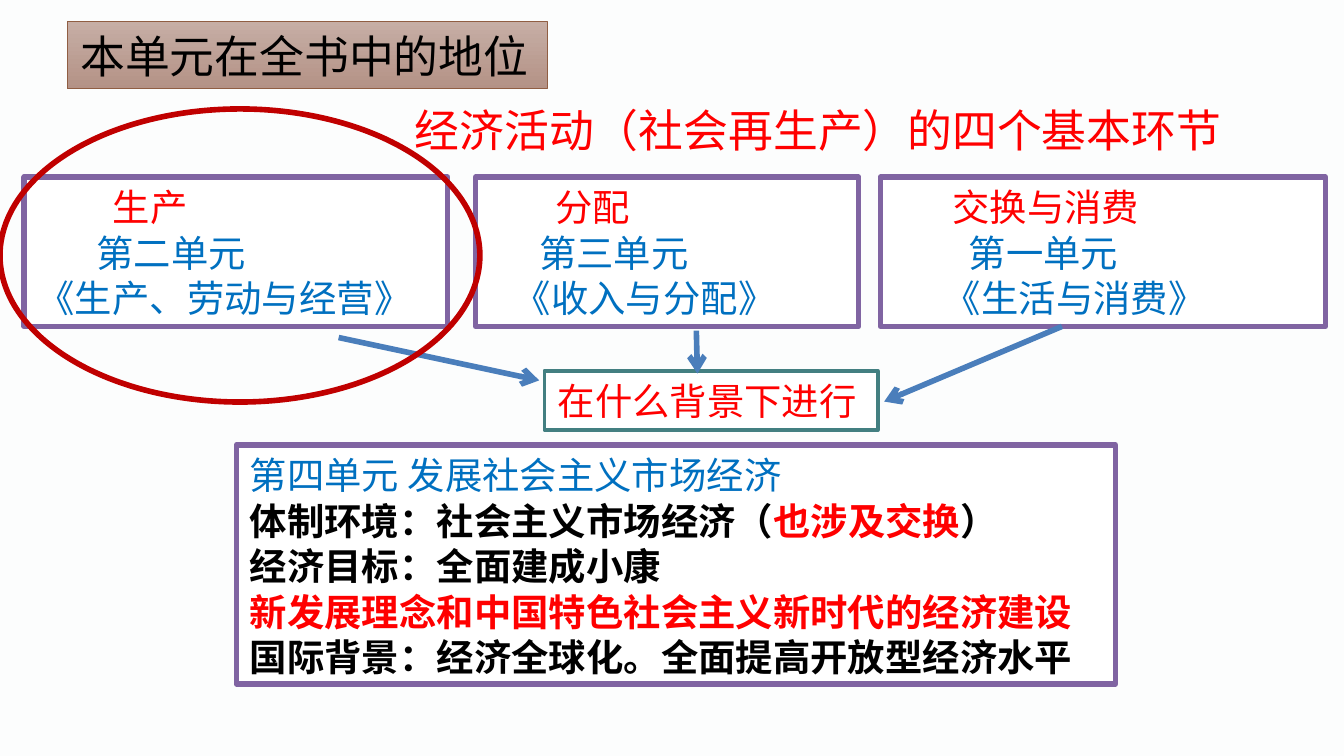
from pptx import Presentation
from pptx import util as u
from pptx.dml.color import RGBColor
from pptx.enum import shapes, text
from pptx.oxml import ns
from lxml import etree

FONT = "Noto Sans CJK SC"
RED = RGBColor(0xFF, 0x00, 0x00)
BLUE = RGBColor(0x00, 0x70, 0xC0)
BLACK = RGBColor(0x00, 0x00, 0x00)
WHITE = RGBColor(0xFF, 0xFF, 0xFF)
PURPLE = RGBColor(0x80, 0x64, 0xA2)
TEAL = RGBColor(0x43, 0x7F, 0x81)
ARROW_BLUE = RGBColor(0x4A, 0x7E, 0xBB)
DARK_RED = RGBColor(0xC0, 0x00, 0x00)
BROWN = RGBColor(0x90, 0x5E, 0x43)
LIGHT_TAN = RGBColor(0xC6, 0xAE, 0xA5)
DARK_TAN = RGBColor(0xB4, 0x92, 0x86)
BACKGROUND = RGBColor(0xFC, 0xFD, 0xFD)
LINE_SPACING = 1.22


def place(left, top, width, height):
    """Return a position and size given in centimetres as lengths."""
    return u.Cm(left), u.Cm(top), u.Cm(width), u.Cm(height)


def add_run(paragraph, words, size, colour, bold):
    """Add one run with Latin and East Asian fonts set."""
    run = paragraph.add_run()
    run.text = words
    run.font.size = u.Pt(size)
    run.font.bold = bold
    run.font.color.rgb = colour
    run.font.name = FONT
    etree.SubElement(run.font._element, ns.qn("a:ea"), typeface=FONT)


def write(shape, lines, size, wrap=True):
    """Write lines, each an indent in centimetres, a bold flag and its coloured runs."""
    frame = shape.text_frame
    frame.word_wrap = wrap
    frame.auto_size = text.MSO_AUTO_SIZE.SHAPE_TO_FIT_TEXT
    frame.vertical_anchor = text.MSO_ANCHOR.TOP
    for index, (indent, bold, runs) in enumerate(lines):
        paragraph = frame.add_paragraph() if index else frame.paragraphs[0]
        paragraph.alignment = text.PP_ALIGN.LEFT
        paragraph.line_spacing = u.Pt(LINE_SPACING * size)
        properties = paragraph._p.get_or_add_pPr()
        properties.set("marL", str(u.Cm(indent)))
        properties.set("indent", "0")
        for words, colour in runs:
            add_run(paragraph, words, size, colour, bold)


def add_outline(slide, kind, box, colour, weight):
    """Add an unfilled preset shape with a coloured outline."""
    shape = slide.shapes.add_shape(kind, *place(*box))
    shape.shadow.inherit = False
    shape.fill.background()
    shape.line.color.rgb = colour
    shape.line.width = u.Pt(weight)
    return shape


def add_box(slide, box, colour, weight, lines):
    """Add a white outlined box holding text."""
    shape = add_outline(slide, shapes.MSO_SHAPE.RECTANGLE, box, colour, weight)
    shape.fill.solid()
    shape.fill.fore_color.rgb = WHITE
    write(shape, lines, 20)


def add_title(slide, box, words):
    """Add the title on a vertical gradient."""
    shape = add_outline(slide, shapes.MSO_SHAPE.RECTANGLE, box, BROWN, 0.5)
    shape.fill.gradient()
    shape.fill.gradient_angle = 270
    for stop, colour in zip(shape.fill.gradient_stops, (LIGHT_TAN, DARK_TAN)):
        stop.color.rgb = colour
    write(shape, [(0, False, [(words, BLACK)])], 24, wrap=False)


def add_heading(slide, box, words):
    """Add the red heading."""
    shape = slide.shapes.add_textbox(*place(*box))
    write(shape, [(0, False, [(words, RED)])], 24)


def add_arrow(slide, ends):
    """Add a straight arrow between two points in centimetres."""
    connector = slide.shapes.add_connector(
        shapes.MSO_CONNECTOR.STRAIGHT, *place(*ends))
    connector.line.color.rgb = ARROW_BLUE
    connector.line.width = u.Pt(3)
    etree.SubElement(connector.line._get_or_add_ln(), ns.qn("a:tailEnd"), type="arrow")
    etree.SubElement(connector._element.spPr, ns.qn("a:effectLst"))


def main():
    """Build and save the slide."""
    presentation = Presentation()
    presentation.slide_width = u.Cm(25.4)
    presentation.slide_height = u.Cm(14.29)
    slide = presentation.slides.add_slide(presentation.slide_layouts[6])
    slide.background.fill.solid()
    slide.background.fill.fore_color.rgb = BACKGROUND

    add_title(slide, (1.27, 0.41, 9.07, 1.27), "本单元在全书中的地位")

    units = [
        (16.64, 8.41, (1.11, 1.42, 0.95), ("交换与消费", "第一单元", "《生活与消费》")),
        (0.46, 8.0, (1.42, 1.11, 0), ("生产", "第二单元", "《生产、劳动与经营》")),
        (8.99, 7.24, (1.26, 0.95, 0.47), ("分配", "第三单元", "《收入与分配》")),
    ]
    for left, width, indents, words in units:
        lines = [(indent, False, [(line, colour)])
                 for indent, line, colour in zip(indents, words, (RED, BLUE, BLUE))]
        add_box(slide, (left, 3.35, width, 2.82), PURPLE, 3, lines)

    add_box(slide, (10.29, 7.01, 6.3, 1.12), TEAL, 2,
            [(0, False, [("在什么背景下进行", RED)])])
    add_box(slide, (4.47, 8.41, 16.61, 4.52), PURPLE, 3, [
        (0, False, [("第四单元 发展社会主义市场经济", BLUE)]),
        (0, True, [("体制环境：社会主义市场经济（", BLACK),
                   ("也涉及交换", RED), ("）", BLACK)]),
        (0, True, [("经济目标：全面建成小康", BLACK)]),
        (0, True, [("新发展理念和中国特色社会主义新时代的经济建设", RED)]),
        (0, True, [("国际背景：经济全球化。全面提高开放型经济水平", BLACK)]),
    ])

    add_heading(slide, (7.59, 1.8, 16.0, 1.3), "经济活动（社会再生产）的四个基本环节")
    for ends in ((6.4, 6.38, 10.19, 7.19),
                 (13.16, 6.25, 13.18, 7.06),
                 (20.07, 6.17, 16.71, 7.59)):
        add_arrow(slide, ends)
    add_outline(slide, shapes.MSO_SHAPE.OVAL, (0, 2.06, 9.07, 5.54), DARK_RED, 3)

    presentation.save("out.pptx")


if __name__ == "__main__":
    main()
